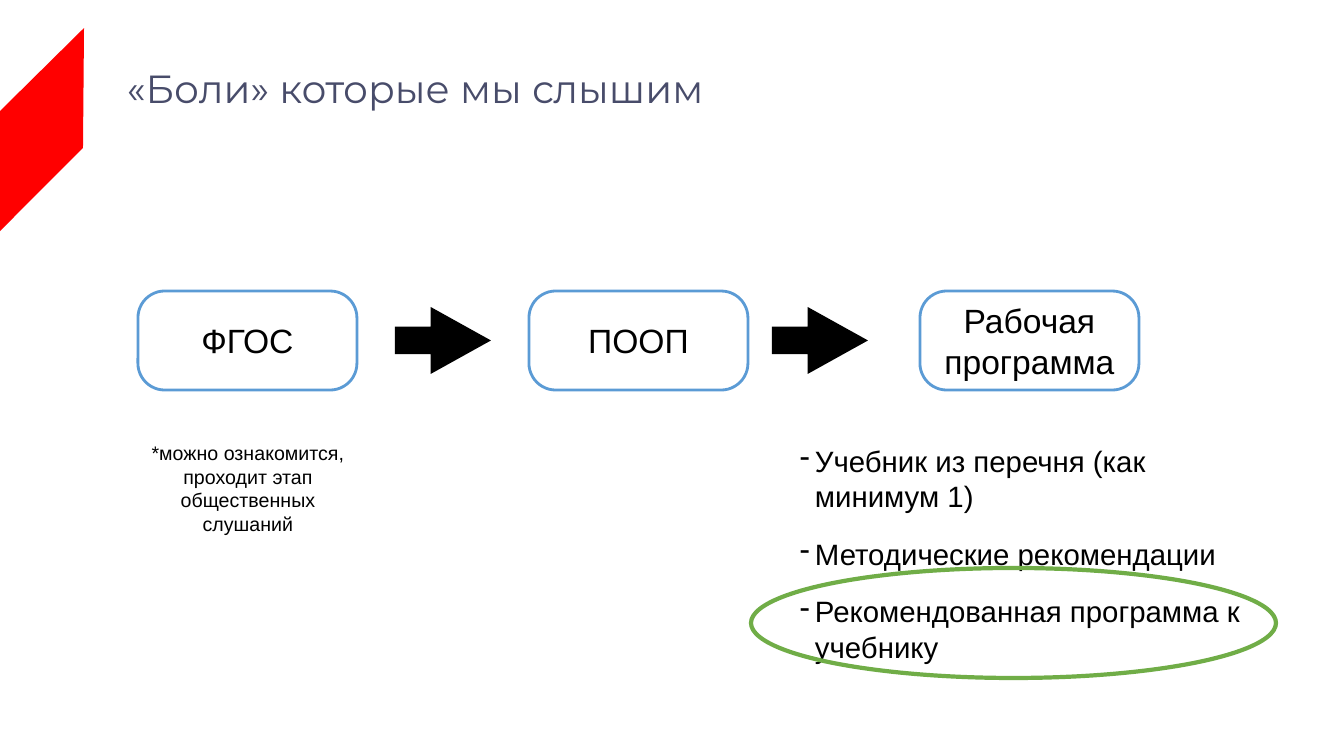
from lxml import etree
from pptx import Presentation
from pptx.dml.color import RGBColor
from pptx.enum.shapes import MSO_SHAPE
from pptx.enum.text import MSO_ANCHOR, PP_ALIGN
from pptx.oxml.ns import qn
from pptx.util import Pt

ROUND, ARROW, OVAL = (MSO_SHAPE.ROUNDED_RECTANGLE, MSO_SHAPE.RIGHT_ARROW,
                      MSO_SHAPE.OVAL)
TOP, MIDDLE = MSO_ANCHOR.TOP, MSO_ANCHOR.MIDDLE
LEFT, CENTER = PP_ALIGN.LEFT, PP_ALIGN.CENTER

# Content
TITLE = "«Боли» которые мы слышим"
STEPS = ["ФГОС", "ПООП", "Рабочая программа"]
NOTE = "*можно ознакомится, проходит этап общественных слушаний"
ITEMS = ["Учебник из перечня (как минимум 1)",
         "Методические рекомендации",
         "Рекомендованная программа к учебнику"]

# Places in px
PX = 914400 / 100.8
RIBBON = [(0, 231), (0, 111), (84, 28), (83, 148)]
STEP_X, STEP_GAP = 138, 391
ARROW_X = [395, 772]
INSET, INDENT = 5, 15

RED = RGBColor(0xFF, 0x00, 0x00)
SLATE = RGBColor(0x48, 0x4C, 0x6A)
BLUE = RGBColor(0x5B, 0x9B, 0xD5)
GREEN = RGBColor(0x70, 0xAD, 0x47)
BLACK = RGBColor(0x00, 0x00, 0x00)


def emu(px):
    return round(px * PX)


def style(shape, fill=None, line=None, width=0):
    shape.shadow.inherit = False
    if fill is None:
        shape.fill.background()
    else:
        shape.fill.solid()
        shape.fill.fore_color.rgb = fill
    if line is None:
        shape.line.fill.background()
    else:
        shape.line.color.rgb = line
        shape.line.width = Pt(width)


def add_shape(kind, box, **look):
    shape = slide.shapes.add_shape(kind, *map(emu, box))
    style(shape, **look)
    return shape


def add_box(*box):
    return slide.shapes.add_textbox(*map(emu, box))


def write(shape, lines, size, color=BLACK, face="Arial", align=LEFT,
          anchor=TOP, dash=False):
    frame = shape.text_frame
    frame.word_wrap = True
    frame.vertical_anchor = anchor
    frame.margin_left = frame.margin_right = emu(INSET)
    frame.margin_top = frame.margin_bottom = emu(INSET)
    for i, line in enumerate(lines):
        para = frame.add_paragraph() if i else frame.paragraphs[0]
        para.text = line
        para.alignment = align
        if i:
            para.space_before = Pt(16)
        if dash:
            props = para._p.get_or_add_pPr()
            props.set("marL", str(emu(INDENT)))
            props.set("indent", str(-emu(INDENT)))
            etree.SubElement(props, qn("a:buChar")).set("char", "-")
        para.font.size = Pt(size)
        para.font.name = face
        para.font.color.rgb = color
    return frame


deck = Presentation()
deck.slide_width, deck.slide_height = emu(1344), emu(756)
slide = deck.slides.add_slide(deck.slide_layouts[6])

# Corner ribbon and title
pen = slide.shapes.build_freeform(*RIBBON[0], scale=PX)
pen.add_line_segments(RIBBON[1:], close=True)
style(pen.convert_to_shape(), fill=RED)
head = write(add_box(122, 40, 963, 101), [TITLE], 28, SLATE, "Montserrat",
             anchor=MIDDLE)
head.paragraphs[0].line_spacing = 0.9

# Chain of steps
for i, step in enumerate(STEPS):
    card = add_shape(ROUND, (STEP_X + i * STEP_GAP, 291, 219, 99),
                     line=BLUE, width=2)
    card.adjustments[0] = 0.27
    write(card, [step], 24, align=CENTER, anchor=MIDDLE)
for x in ARROW_X:
    arrow = add_shape(ARROW, (x, 307, 96, 67), fill=BLACK)
    arrow.adjustments[0], arrow.adjustments[1] = 0.41, 0.9

# Remarks under the steps
write(add_box(137, 436, 222, 99), [NOTE], 14, align=CENTER)
write(add_box(795, 438, 469, 222), ITEMS, 21, dash=True)
add_shape(OVAL, (751, 568, 525, 110), line=GREEN, width=3)

deck.save("out.pptx")
